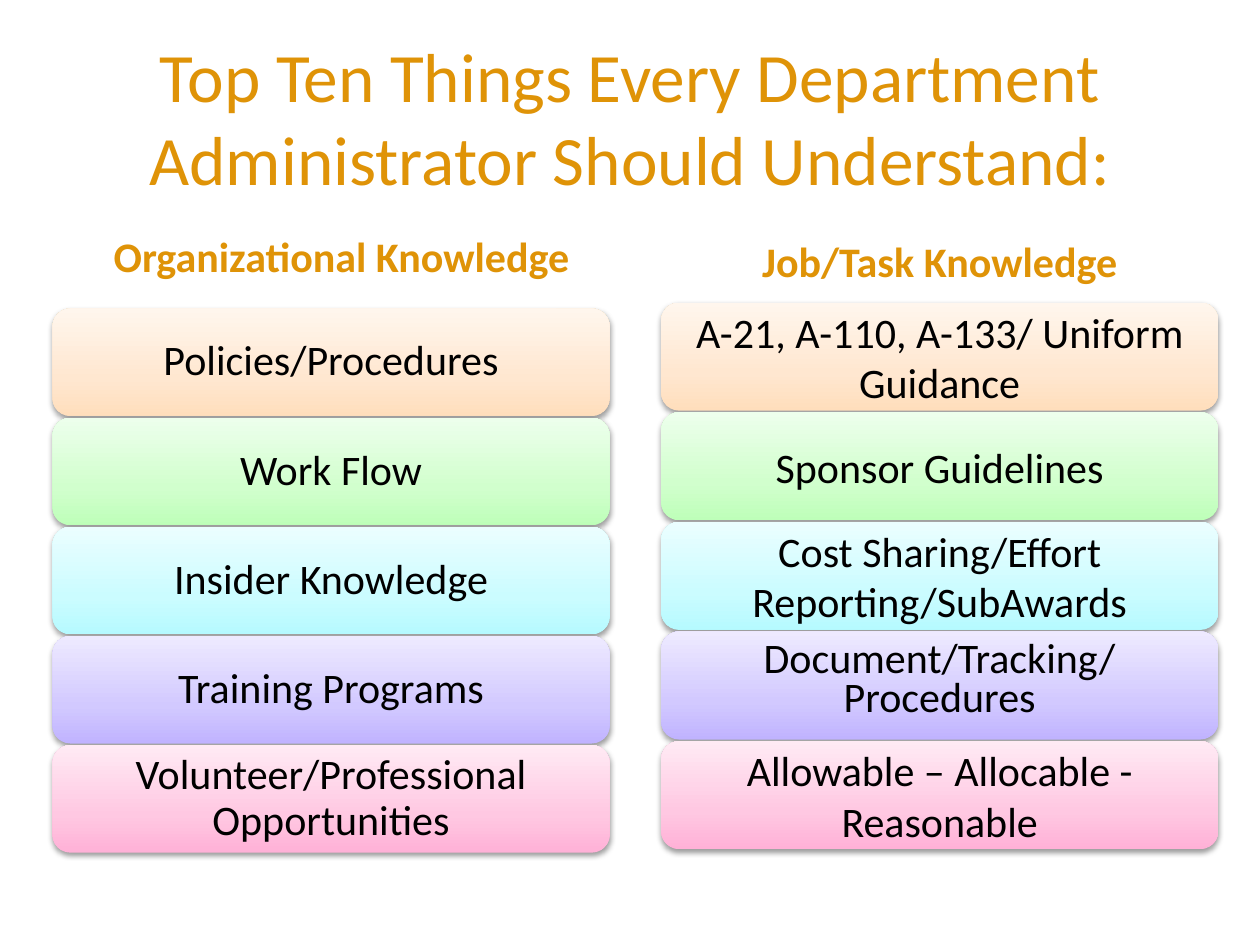
"""Builds a slide with two columns of things a department administrator should know."""
from lxml import etree
from pptx import Presentation
from pptx.dml.color import RGBColor
from pptx.enum.shapes import MSO_SHAPE
from pptx.enum.text import MSO_ANCHOR, PP_ALIGN
from pptx.oxml import parse_xml
from pptx.oxml.ns import nsdecls
from pptx.util import Cm, Pt

GOLD = RGBColor(0xDF, 0x93, 0x07)
BLACK = RGBColor(0, 0, 0)
PEACH = RGBColor(0xFF, 0xDE, 0xBC), RGBColor(0xFF, 0xE7, 0xD0), RGBColor(0xFF, 0xF6, 0xED)
GREEN = RGBColor(0xBE, 0xFF, 0xB9), RGBColor(0xD1, 0xFF, 0xCD), RGBColor(0xED, 0xFF, 0xEC)
AQUA = RGBColor(0xB6, 0xFA, 0xFF), RGBColor(0xCB, 0xFC, 0xFF), RGBColor(0xEB, 0xFE, 0xFF)
LILAC = RGBColor(0xC0, 0xB3, 0xFF), RGBColor(0xD2, 0xC9, 0xFF), RGBColor(0xEE, 0xEA, 0xFF)
PINK = RGBColor(0xFF, 0xB1, 0xD7), RGBColor(0xFF, 0xC8, 0xE2), RGBColor(0xFF, 0xEA, 0xF4)
SHADES = PEACH, GREEN, AQUA, LILAC, PINK

WIDTH = Cm(11.23)
TITLE = {"name": "Calibri", "size": Pt(39.6)}
HEAD = {"name": "Calibri", "size": Pt(24), "bold": True}
BODY = {"name": "Calibri", "size": Pt(24)}

LEFT = [
    ("Policies/Procedures", 0.9),
    ("Work Flow", 0.9),
    ("Insider Knowledge", 0.9),
    ("Training Programs", 0.9),
    ("Volunteer/Professional Opportunities", 0.9),
]
RIGHT = [
    ("A-21, A-110, A-133/ Uniform Guidance", 1.0),
    ("Sponsor Guidelines", 1.0),
    ("Cost Sharing/Effort Reporting/SubAwards", 1.0),
    ("Document/Tracking/\nProcedures", 0.5),
    ("Allowable – Allocable - Reasonable", 1.0),
]


def apply(item, values):
    """Set each attribute named in a dict of format values."""
    for key, value in values.items():
        setattr(item, key, value)


def write(shape, text, font, color, para):
    """Fill a shape with centred, wrapped text."""
    frame = shape.text_frame
    apply(frame, {"text": text, "word_wrap": True, "vertical_anchor": MSO_ANCHOR.MIDDLE})
    for line in frame.paragraphs:
        apply(line, {"alignment": PP_ALIGN.CENTER, **para})
        for run in line.runs:
            apply(run.font, font)
            run.font.color.rgb = color


def label(slide, text, box, font):
    """Add a gold text box."""
    write(slide.shapes.add_textbox(*box), text, font, GOLD, {})


def shade(shape, colors):
    """Give a shape an upward three-stop gradient and a soft shadow."""
    stops = "".join(
        f'<a:gs pos="{pos}"><a:srgbClr val="{color}"/></a:gs>'
        for pos, color in zip((0, 35000, 100000), colors)
    )
    shape.shadow.inherit = False
    shape.line.fill.background()
    props = shape._element.spPr
    props.find("{*}prstGeom").addnext(parse_xml(
        f'<a:gradFill {nsdecls("a")} rotWithShape="1"><a:gsLst>{stops}</a:gsLst>'
        '<a:lin ang="16200000" scaled="0"/></a:gradFill>'
    ))
    glow = parse_xml(
        f'<a:outerShdw {nsdecls("a")} blurRad="40000" dist="20000" dir="5400000" '
        'rotWithShape="0"><a:srgbClr val="000000"><a:alpha val="38000"/></a:srgbClr>'
        '</a:outerShdw>'
    )
    etree.ElementBase.append(props.find("{*}effectLst"), glow)


def card(group, text, box, colors, space):
    """Add one rounded card with its text."""
    shape = group.shapes.add_shape(MSO_SHAPE.ROUNDED_RECTANGLE, *box)
    shade(shape, colors)
    sides = ("left", "top", "right", "bottom")
    apply(shape.text_frame, {f"margin_{side}": Cm(0.25) for side in sides})
    write(shape, text, BODY, BLACK, {"line_spacing": space, "space_after": Pt(8.4)})


def stack(slide, items, left, top, step, height):
    """Add a group of evenly spaced cards."""
    group = slide.shapes.add_group_shape()
    for row, ((text, space), colors) in enumerate(zip(items, SHADES)):
        box = Cm(left), Cm(top + row * step), WIDTH, Cm(height)
        card(group, text, box, colors, space)


def main():
    """Build and save the slide."""
    deck = Presentation()
    apply(deck, {"slide_width": Cm(25.4), "slide_height": Cm(19.05)})
    slide = deck.slides.add_slide(deck.slide_layouts[6])
    label(slide, "Top Ten Things Every Department Administrator Should Understand:",
          (Cm(1.27), Cm(0.76), Cm(22.86), Cm(3.18)), TITLE)
    label(slide, "Organizational Knowledge", (Cm(1.27), Cm(4.27), WIDTH, Cm(1.78)), HEAD)
    stack(slide, RIGHT, 13.33, 6.1, 2.21, 2.18)
    label(slide, "Job/Task Knowledge", (Cm(13.33), Cm(4.37), WIDTH, Cm(1.78)), HEAD)
    stack(slide, LEFT, 1.06, 6.22, 2.2, 2.17)
    deck.save("out.pptx")


if __name__ == "__main__":
    main()
